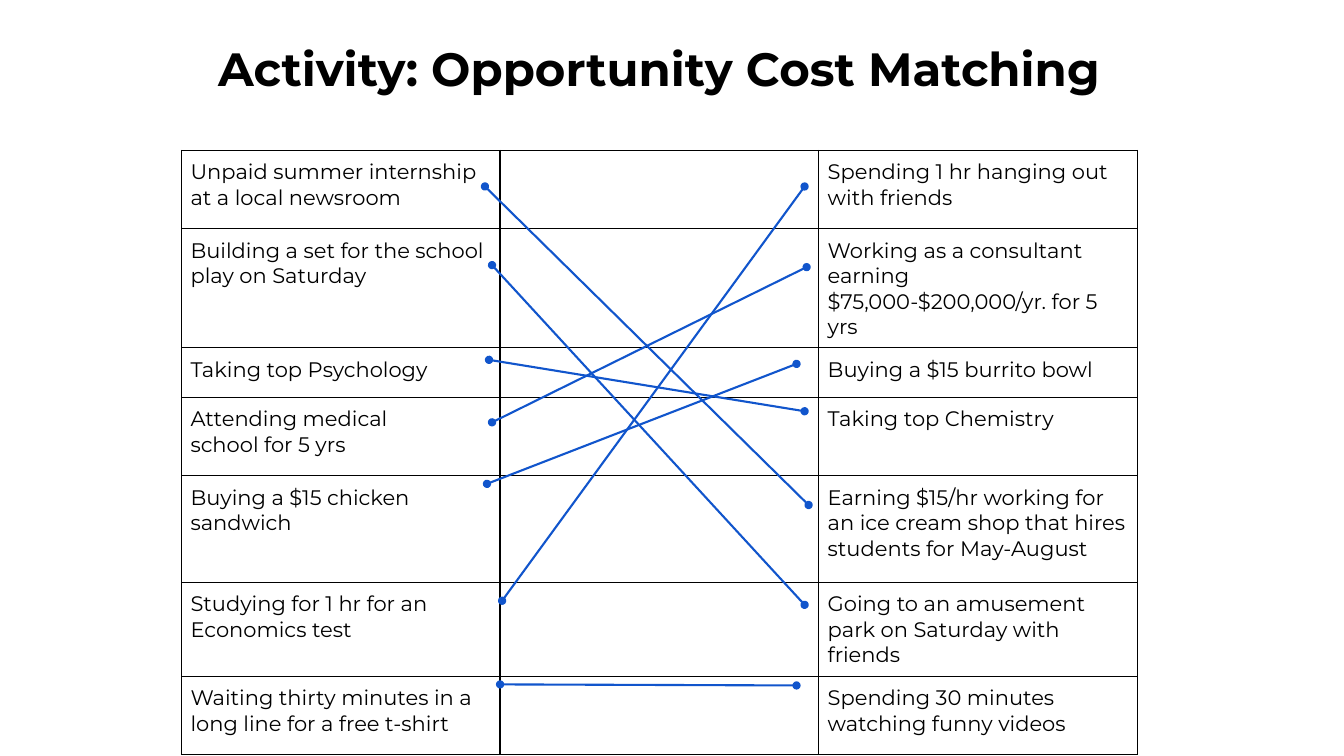
from dataclasses import dataclass

from lxml.etree import SubElement
from pptx import Presentation
from pptx.dml.color import RGBColor
from pptx.enum.shapes import MSO_CONNECTOR
from pptx.enum.text import PP_ALIGN
from pptx.oxml import parse_xml
from pptx.oxml.ns import nsdecls, qn
from pptx.util import Inches, Pt

BLACK = "000000"
BLUE = "1155CC"
COLUMN_WIDTH = 3.16


@dataclass(frozen=True)
class Row:
    height: float
    choice: str
    cost: str


@dataclass(frozen=True)
class Match:
    x1: float
    y1: float
    x2: float
    y2: float


ROWS = [
    Row(0.78, "Unpaid summer internship at a local newsroom",
        "Spending 1 hr hanging out with friends"),
    Row(1.06, "Building a set for the school play on Saturday",
        "Working as a consultant earning $75,000-$200,000/yr. for 5 yrs"),
    Row(0.49, "Taking a Psychology", "Buying a $15 burrito bowl"),
    Row(0.78, "Attending medical \vschool for 5 yrs", "Taking a Chemistry"),
    Row(1.06, "Buying a $15 chicken sandwich",
        "Earning $15/hr working for an ice cream shop that hires students for May-August"),
    Row(0.92, "Studying for 1 hr for an Economics test",
        "Going to an amusement park on Saturday with friends"),
    Row(0.78, "Waiting thirty minutes in a long line for a free t-shirt",
        "Spending 30 minutes watching funny videos"),
]
ROWS[2] = Row(0.49, "Taking top Psychology", ROWS[2].cost)
ROWS[3] = Row(0.78, ROWS[3].choice, "Taking top Chemistry")

MATCHES = [
    Match(4.81, 1.85, 8.02, 5.01),
    Match(4.88, 2.63, 7.98, 6),
    Match(4.85, 3.57, 7.98, 4.08),
    Match(4.88, 4.19, 8, 2.65),
    Match(4.83, 4.8, 7.9, 3.61),
    Match(4.98, 5.96, 7.98, 1.85),
    Match(4.96, 6.79, 7.9, 6.8),
]


def color(value: str) -> RGBColor:
    return RGBColor.from_string(value)


def set_attrs(obj, values: dict) -> None:
    for name, value in values.items():
        setattr(obj, name, value)


def margins(prefix: str, inches: float) -> dict:
    return {f"{prefix}{side}": Inches(inches) for side in ("left", "right", "top", "bottom")}


def write(p, text: str, size: float, bold: bool = False) -> None:
    p.text = text
    for r in p.runs:
        set_attrs(r.font, {"name": "Montserrat", "size": Pt(size), "bold": bold})
        r.font.color.rgb = color(BLACK)


def add_title(s) -> None:
    sp = s.shapes.add_textbox(Inches(0.14), Inches(0.27), Inches(12.8), Inches(0.83))
    tf = sp.text_frame
    set_attrs(tf, {"word_wrap": True, **margins("margin_", 0.13)})
    p = tf.paragraphs[0]
    p.alignment = PP_ALIGN.CENTER
    write(p, "Activity: Opportunity Cost Matching", 33.3, True)


def add_borders(cell, widths: dict[str, float]) -> None:
    tc_pr = cell._tc.get_or_add_tcPr()
    for i, (side, width) in enumerate(widths.items()):
        tc_pr.insert(i, parse_xml(
            f'<a:{side} {nsdecls("a")} w="{Pt(width)}"><a:solidFill>'
            f'<a:srgbClr val="{BLACK}"/></a:solidFill></a:{side}>'))


def add_matching_table(s, rows: list[Row]) -> None:
    height = sum(row.height for row in rows)
    table = s.shapes.add_table(len(rows), 3, Inches(1.8), Inches(1.49),
                               Inches(3 * COLUMN_WIDTH), Inches(height)).table
    set_attrs(table, {"first_row": False, "horz_banding": False})
    for column in table.columns:
        column.width = Inches(COLUMN_WIDTH)
    for i, row in enumerate(rows):
        table.rows[i].height = Inches(row.height)
        for j, text in enumerate((row.choice, "", row.cost)):
            cell = table.cell(i, j)
            set_attrs(cell, margins("margin_", 0.09))
            cell.fill.background()
            add_borders(cell, {"lnL": 1.5 if j == 1 else 0.75,
                               "lnR": 1.5 if j == 0 else 0.75,
                               "lnT": 0.75, "lnB": 0.75})
            if text:
                write(cell.text_frame.paragraphs[0], text, 15)


def add_match(s, match: Match) -> None:
    sp = s.shapes.add_connector(MSO_CONNECTOR.STRAIGHT, Inches(match.x1), Inches(match.y1),
                                Inches(match.x2), Inches(match.y2))
    sp.line.color.rgb = color(BLUE)
    sp.line.width = Pt(1.5)
    ln = sp.line._get_or_add_ln()
    for end in ("a:headEnd", "a:tailEnd"):
        SubElement(ln, qn(end), type="oval")
    SubElement(sp._element.spPr, qn("a:effectLst"))


def main() -> None:
    prs = Presentation()
    set_attrs(prs, {"slide_width": Inches(13.33), "slide_height": Inches(7.5)})
    s = prs.slides.add_slide(prs.slide_layouts[6])
    add_title(s)
    add_matching_table(s, ROWS)
    for match in MATCHES:
        add_match(s, match)
    prs.save("out.pptx")


if __name__ == "__main__":
    main()
